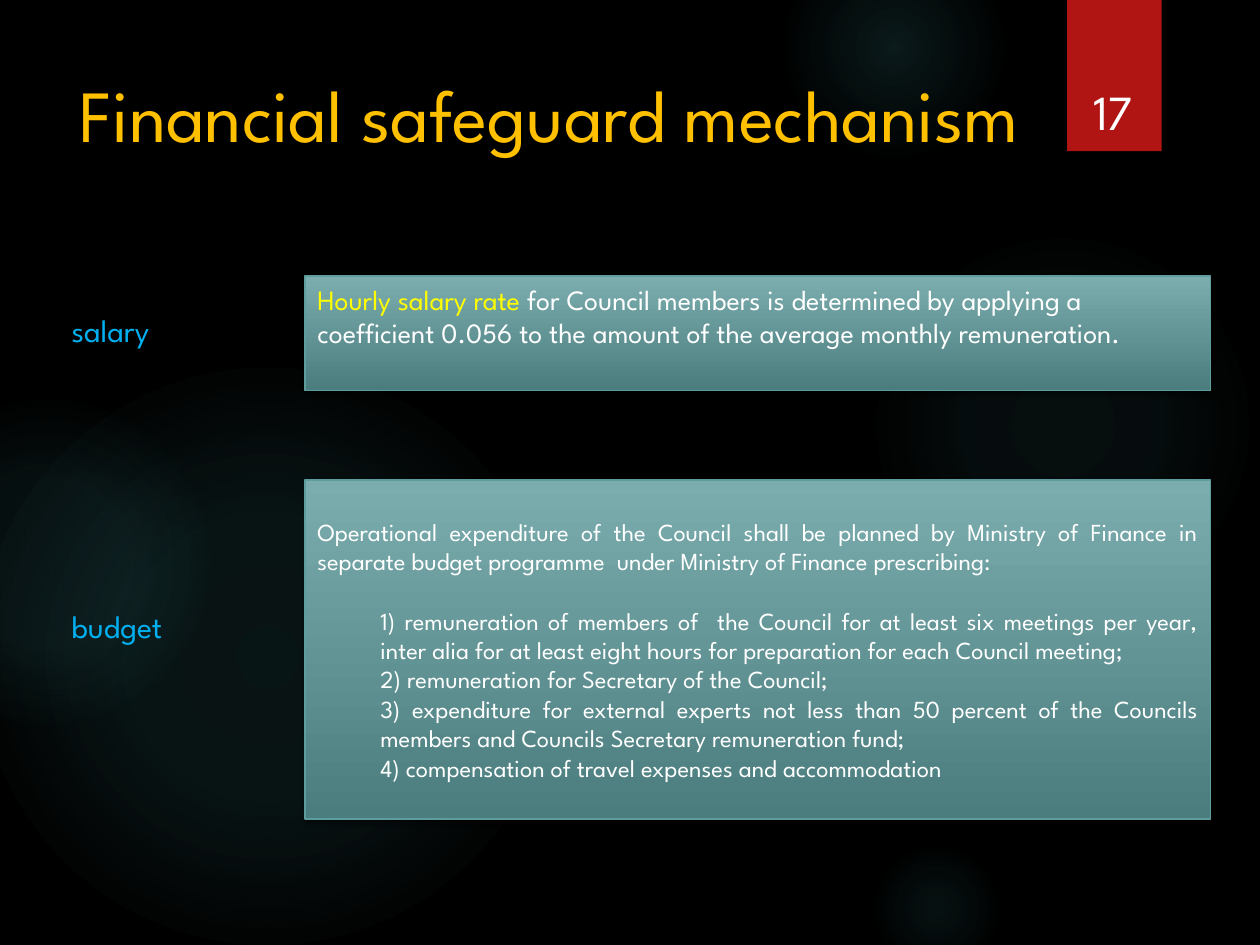
from dataclasses import dataclass

from lxml import etree
from pptx import Presentation
from pptx.dml.color import RGBColor
from pptx.enum.shapes import MSO_SHAPE
from pptx.enum.text import MSO_ANCHOR, PP_ALIGN
from pptx.oxml.ns import qn
from pptx.shapes.autoshape import Shape
from pptx.slide import Slide
from pptx.text.text import TextFrame
from pptx.util import Emu, Inches, Pt

OVAL, RECTANGLE = MSO_SHAPE.OVAL, MSO_SHAPE.RECTANGLE
TOP, MIDDLE, BOTTOM = MSO_ANCHOR.TOP, MSO_ANCHOR.MIDDLE, MSO_ANCHOR.BOTTOM
LEFT, CENTER, JUSTIFY = PP_ALIGN.LEFT, PP_ALIGN.CENTER, PP_ALIGN.JUSTIFY

BLACK = RGBColor(0x00, 0x00, 0x00)
WHITE = RGBColor(0xFF, 0xFF, 0xFF)
GLOW_TEAL = RGBColor(0x50, 0xB9, 0xC1)
RIBBON_RED = RGBColor(0xB0, 0x15, 0x13)
TITLE_GOLD = RGBColor(0xFF, 0xC0, 0x00)
LABEL_BLUE = RGBColor(0x00, 0xB0, 0xF0)
HIGHLIGHT_YELLOW = RGBColor(0xFF, 0xFF, 0x00)
PANEL_LIGHT = RGBColor(0x7C, 0xAD, 0xAE)
PANEL_DARK = RGBColor(0x4C, 0x7D, 0x7E)
PANEL_EDGE = RGBColor(0x5F, 0x9C, 0x9D)

FONT = "League Spartan"
COLUMNS, ROWS = 100, 75
CELL = Inches(10) // COLUMNS
PANEL_LEFT, PANEL_WIDTH = 24.2, 71.9
LABEL_LEFT, LABEL_HEIGHT = 4.7, 4


@dataclass(frozen=True)
class Area:
    """A place on the slide grid, in columns and rows."""
    left: float
    top: float
    width: float
    height: float

    def lengths(self) -> list[Emu]:
        return [Emu(round(cells * CELL))
                for cells in (self.left, self.top, self.width, self.height)]


@dataclass(frozen=True)
class Glow:
    """A soft circle; stops pair a position with an opacity, in percent."""
    left: float
    top: float
    size: float
    stops: tuple[tuple[int, int], ...]


@dataclass(frozen=True)
class Label:
    text: str
    area: Area
    size: int
    color: RGBColor
    anchor: MSO_ANCHOR = TOP
    alignment: PP_ALIGN = LEFT


GLOWS = (
    Glow(68.9, 18.3, 30.8, ((0, 7), (36, 6), (69, 0))),
    Glow(62.2, -5, 17.5, ((0, 14), (36, 7), (73, 0))),
    Glow(68.9, 66.7, 10.8, ((0, 9), (36, 5), (66, 0))),
    Glow(-1.7, 29.2, 45.8, ((0, 11), (36, 10), (75, 0))),
    Glow(-9.2, 31.7, 25.8, ((0, 8), (36, 8), (72, 0))),
)
LABELS = (
    Label("Financial safeguard mechanism", Area(5.3, 5, 77.2, 15.3), 42, TITLE_GOLD),
    Label("salary", Area(LABEL_LEFT, 24.2, 16.4, LABEL_HEIGHT), 18, LABEL_BLUE),
    Label("budget", Area(LABEL_LEFT, 47.7, 14.8, LABEL_HEIGHT), 18, LABEL_BLUE),
    Label("17", Area(84.9, 3.2, 6.9, 8.4), 28, WHITE, BOTTOM, CENTER),
)
SALARY_HIGHLIGHT = "Hourly salary rate "
SALARY_RULE = ("for Council members is determined by applying a coefficient 0.056 "
               "to the amount of the average monthly remuneration.")
BUDGET_INTRO = ("Operational expenditure of the Council shall be planned by Ministry of "
                "Finance in separate budget programme  under Ministry of Finance prescribing:")
BUDGET_ITEMS = (
    "1) remuneration of members of  the Council for at least six meetings per year, "
    "inter alia for at least eight hours for preparation for each Council meeting;",
    "2) remuneration for Secretary of the Council;",
    "3) expenditure for external experts not less than 50 percent of the Councils "
    "members and Councils Secretary remuneration fund;",
    "4) compensation of travel expenses and accommodation",
)


def add_color(parent: etree._Element, color: RGBColor, opacity: int) -> None:
    element = etree.SubElement(parent, qn("a:srgbClr"), val=str(color))
    etree.SubElement(element, qn("a:alpha"), val=str(opacity * 1000))


def add_plain_shape(slide: Slide, kind: MSO_SHAPE, area: Area) -> Shape:
    shape = slide.shapes.add_shape(kind, *area.lengths())
    shape.shadow.inherit = False
    shape.line.fill.background()
    return shape


def add_glow(slide: Slide, glow: Glow) -> None:
    shape = add_plain_shape(slide, OVAL, Area(glow.left, glow.top, glow.size, glow.size))
    shape.fill.background()
    properties = shape.element.spPr
    gradient = etree.Element(qn("a:gradFill"), rotWithShape="1")
    stop_list = etree.SubElement(gradient, qn("a:gsLst"))
    for position, opacity in glow.stops:
        stop = etree.SubElement(stop_list, qn("a:gs"), pos=str(position * 1000))
        add_color(stop, GLOW_TEAL, opacity)
    path = etree.SubElement(gradient, qn("a:path"), path="circle")
    etree.SubElement(path, qn("a:fillToRect"),
                     {side: "50000" for side in ("l", "t", "r", "b")})
    properties.replace(properties.find(qn("a:noFill")), gradient)


def add_shadow(shape: Shape) -> None:
    effects = shape.element.spPr.find(qn("a:effectLst"))
    shadow = etree.SubElement(effects, qn("a:outerShdw"), blurRad=str(Pt(3)),
                              dist=str(Pt(2)), dir="5400000", rotWithShape="0")
    add_color(shadow, BLACK, 45)


def add_ribbon(slide: Slide) -> None:
    ribbon = add_plain_shape(slide, RECTANGLE, Area(84.7, 0, 7.5, 12))
    ribbon.fill.solid()
    ribbon.fill.fore_color.rgb = RIBBON_RED
    add_shadow(ribbon)


def add_panel(slide: Slide, top: float, height: float, anchor: MSO_ANCHOR) -> TextFrame:
    panel = add_plain_shape(slide, RECTANGLE, Area(PANEL_LEFT, top, PANEL_WIDTH, height))
    panel.fill.gradient()
    panel.fill.gradient_angle = 270
    for stop, color in zip(panel.fill.gradient_stops, (PANEL_LIGHT, PANEL_DARK)):
        stop.color.rgb = color
    panel.line.color.rgb = PANEL_EDGE
    panel.line.width = Pt(0.75)
    add_shadow(panel)
    panel.text_frame.word_wrap = True
    panel.text_frame.vertical_anchor = anchor
    return panel.text_frame


def format_text(text_frame: TextFrame, size: int, color: RGBColor,
                alignment: PP_ALIGN) -> None:
    for paragraph in text_frame.paragraphs:
        paragraph.alignment = alignment
        for run in paragraph.runs:
            run.font.name = FONT
            run.font.size = Pt(size)
            run.font.color.rgb = color


def add_label(slide: Slide, label: Label) -> None:
    text_frame = slide.shapes.add_textbox(*label.area.lengths()).text_frame
    text_frame.word_wrap = True
    text_frame.vertical_anchor = label.anchor
    text_frame.text = label.text
    format_text(text_frame, label.size, label.color, label.alignment)


def add_salary_panel(slide: Slide) -> None:
    text_frame = add_panel(slide, 21.9, 9.1, TOP)
    text_frame.text = SALARY_HIGHLIGHT
    paragraph = text_frame.paragraphs[0]
    paragraph.add_run().text = SALARY_RULE
    format_text(text_frame, 16, WHITE, LEFT)
    paragraph.runs[0].font.color.rgb = HIGHLIGHT_YELLOW


def add_budget_panel(slide: Slide) -> None:
    text_frame = add_panel(slide, 38.1, 26.9, MIDDLE)
    text_frame.text = "\n".join((BUDGET_INTRO, *BUDGET_ITEMS))
    format_text(text_frame, 14, WHITE, JUSTIFY)
    intro, *items = text_frame.paragraphs
    intro.space_after = Pt(17)
    for item in items:
        item._p.get_or_add_pPr().set("marL", str(5 * CELL))


def main() -> None:
    presentation = Presentation()
    presentation.slide_width = COLUMNS * CELL
    presentation.slide_height = ROWS * CELL
    slide = presentation.slides.add_slide(presentation.slide_layouts[6])
    slide.background.fill.solid()
    slide.background.fill.fore_color.rgb = BLACK
    for glow in GLOWS:
        add_glow(slide, glow)
    add_ribbon(slide)
    add_salary_panel(slide)
    add_budget_panel(slide)
    for label in LABELS:
        add_label(slide, label)
    presentation.save("out.pptx")


if __name__ == "__main__":
    main()
